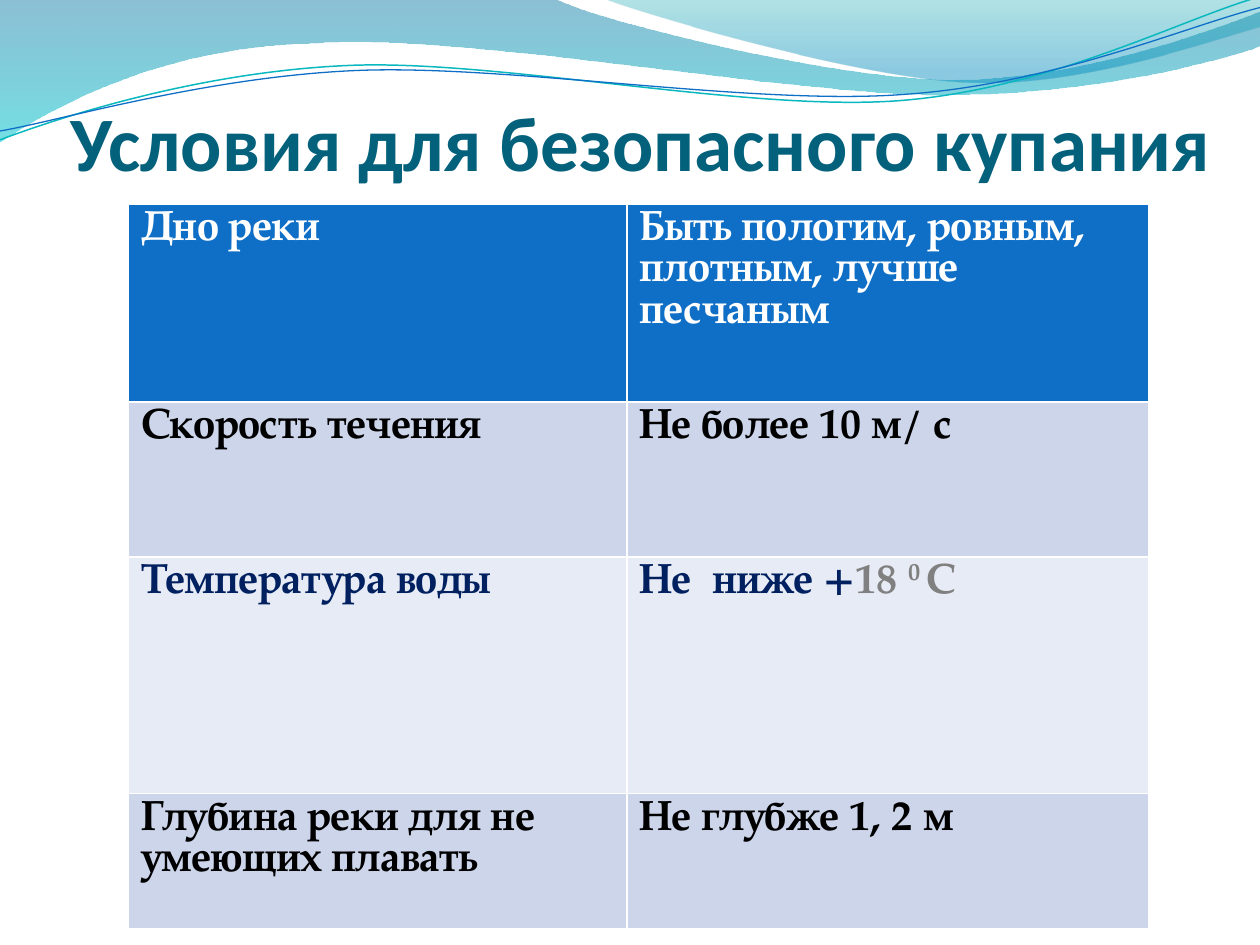
from typing import NamedTuple

from lxml.etree import SubElement
from pptx import Presentation
from pptx.dml.color import RGBColor
from pptx.enum.text import MSO_ANCHOR, PP_ALIGN
from pptx.oxml.ns import qn
from pptx.util import Inches, Pt

WHITE = RGBColor(0xFF, 0xFF, 0xFF)
BLACK = RGBColor(0, 0, 0)
GRAY = RGBColor(0x80, 0x80, 0x80)
NAVY = RGBColor(0x00, 0x20, 0x60)
TITLE_TEAL = RGBColor(0x04, 0x61, 0x7B)
BLUE = RGBColor(0x0F, 0x6F, 0xC6)
TURQUOISE = RGBColor(0x0A, 0xB8, 0xBF)
ROW_DARK = RGBColor(0xCC, 0xD5, 0xEA)
ROW_LIGHT = RGBColor(0xE7, 0xEB, 0xF5)

Point = tuple[float, float]


class Stop(NamedTuple):
    position: float
    color: RGBColor
    opacity: int


class Wave(NamedTuple):
    """Segments of one point are straight; segments of three are Bezier curves."""
    start: Point
    segments: list[tuple[Point, ...]]
    stops: tuple[Stop, ...] = ()
    line: RGBColor | None = None
    line_width: float = 0


class Span(NamedTuple):
    text: str
    color: RGBColor
    superscript: bool = False


class Row(NamedTuple):
    height: float
    fill: RGBColor
    cells: list[list[Span]]


WAVES = [
    Wave((0, 0), [
        ((4.4, -0.01),),
        ((4.76, 0.17), (6.64, 0.63), (7.58, 0.63)),
        ((8.53, 0.63), (9.58, 0.26), (10, 0.09)),
        ((10.01, 0.36),),
        ((9.83, 0.44), (8.7, 0.76), (7.46, 0.75)),
        ((6.22, 0.75), (3.82, 0.28), (2.57, 0.34)),
        ((1.29, 0.36), (0.46, 0.83), (-0.01, 1.13)),
        ((0, 0),),
    ], stops=(Stop(0, RGBColor(0x00, 0x74, 0xA1), 45),
              Stop(1, RGBColor(0x00, 0xC6, 0xCF), 55))),
    Wave((4.79, -0.01), [
        ((5.09, 0.11), (6.82, 0.62), (7.69, 0.65)),
        ((8.56, 0.69), (9.61, 0.32), (10, 0.21)),
        ((10, 0),),
        ((4.79, -0.01),),
    ], stops=(Stop(0, RGBColor(0x00, 0xA1, 0xA9), 30),
              Stop(0.8, RGBColor(0x00, 0x8B, 0xBF), 45))),
    Wave((0, 1.11), [
        ((0.48, 0.93), (1.58, 0.57), (2.77, 0.52)),
        ((3.95, 0.47), (5.93, 0.89), (7.13, 0.8)),
        ((8.33, 0.71), (9.38, 0.15), (9.98, -0.02)),
    ], line=TURQUOISE, line_width=0.85),
    Wave((0, 1.04), [
        ((0.47, 0.96), (1.64, 0.61), (2.83, 0.56)),
        ((4.03, 0.51), (5.97, 0.84), (7.17, 0.75)),
        ((8.36, 0.67), (9.41, 0.21), (10, 0.06)),
    ], line=BLUE, line_width=0.75),
]

COLUMN_WIDTHS = [3.955, 4.145]
ROWS = [
    Row(1.57, BLUE, [[Span("Дно реки", WHITE)],
                     [Span("Быть пологим, ровным, плотным, лучше песчаным", WHITE)]]),
    Row(1.23, ROW_DARK, [[Span("Скорость течения", BLACK)],
                         [Span("Не более 10 м/ с", BLACK)]]),
    Row(1.88, ROW_LIGHT, [[Span("Температура воды", NAVY)],
                          [Span("Не  ниже +", NAVY), Span("18 ", GRAY),
                           Span("0 ", GRAY, superscript=True), Span("С", GRAY)]]),
    Row(1.07, ROW_DARK, [[Span("Глубина реки для не умеющих плавать", BLACK)],
                         [Span("Не глубже 1, 2 м", BLACK)]]),
]


def bend_segments(shape, segments: list[tuple[Point, ...]]) -> None:
    """Turn each three straight steps of a curved segment into one Bezier step."""
    steps = iter(shape._element.spPr.xpath(".//a:path/a:lnTo"))
    for segment in segments:
        group = [next(steps) for _ in segment]
        if len(group) == 3:
            group[0].tag = qn("a:cubicBezTo")
            for step in group[1:]:
                group[0].append(step[0])
                step.getparent().remove(step)


def draw_wave(page, wave: Wave) -> None:
    points = [point for segment in wave.segments for point in segment]
    builder = page.shapes.build_freeform(*map(Inches, wave.start))
    builder.add_line_segments([(Inches(x), Inches(y)) for x, y in points],
                              close=bool(wave.stops))
    shape = builder.convert_to_shape()
    bend_segments(shape, wave.segments)
    shape.shadow.inherit = False
    if wave.line is not None:
        shape.fill.background()
        shape.line.color.rgb = wave.line
        shape.line.width = Pt(wave.line_width)
        return
    shape.line.fill.background()
    shape.fill.gradient()
    shape.fill.gradient_angle = 270
    for target, stop in zip(shape.fill.gradient_stops, wave.stops):
        target.position = stop.position
        target.color.rgb = stop.color
    colors = shape._element.spPr.xpath(".//a:gs/a:srgbClr")
    for color, stop in zip(colors, wave.stops):
        SubElement(color, qn("a:alpha"), val=str(stop.opacity * 1000))


def write_cell(cell, spans: list[Span]) -> None:
    para = cell.text_frame.paragraphs[0]
    para.font.name = "TeX Gyre Pagella"
    para.font.size = Pt(24)
    para.font.bold = True
    for span in spans:
        run = para.add_run()
        run.text = span.text
        run.font.color.rgb = span.color
        if span.superscript:
            run.font._element.set("baseline", "30000")


def draw_table(page) -> None:
    """The white rules between cells come from the default table style."""
    table = page.shapes.add_table(
        len(ROWS), len(COLUMN_WIDTHS), Inches(1.02), Inches(1.62),
        Inches(sum(COLUMN_WIDTHS)), Inches(sum(row.height for row in ROWS))).table
    for column, width in zip(table.columns, COLUMN_WIDTHS):
        column.width = Inches(width)
    for index, row in enumerate(ROWS):
        table.rows[index].height = Inches(row.height)
        for column, spans in enumerate(row.cells):
            cell = table.cell(index, column)
            cell.fill.solid()
            cell.fill.fore_color.rgb = row.fill
            write_cell(cell, spans)


def write_title(page) -> None:
    title = page.shapes.title
    page.shapes._spTree.append(title._element)  # in front of the waves
    title.left, title.top = Inches(0.55), Inches(0.23)
    title.width, title.height = Inches(9.08), Inches(1.25)
    frame = title.text_frame
    frame.text = "Условия для безопасного купания"
    frame.vertical_anchor = MSO_ANCHOR.BOTTOM
    frame.margin_left = frame.margin_right = frame.margin_bottom = 0
    frame.margin_top = Inches(0.05)
    para = frame.paragraphs[0]
    para.alignment = PP_ALIGN.CENTER
    para.font.name = "Calibri"
    para.font.size = Pt(44)
    para.font.bold = True
    para.font.color.rgb = TITLE_TEAL


def main() -> None:
    deck = Presentation()
    deck.slide_width, deck.slide_height = Inches(10), Inches(7.5)
    page = deck.slides.add_slide(deck.slide_layouts[5])
    for wave in WAVES:
        draw_wave(page, wave)
    write_title(page)
    draw_table(page)
    deck.save("out.pptx")


if __name__ == "__main__":
    main()
